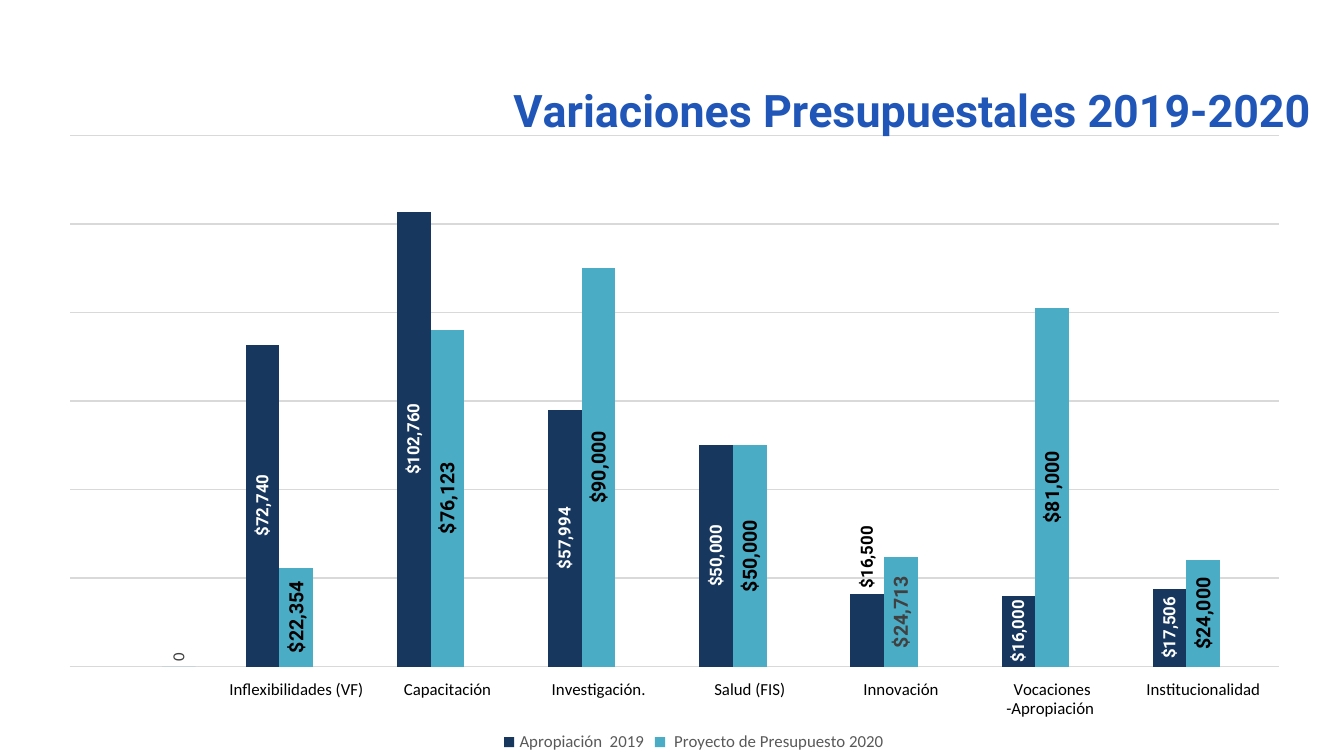
from dataclasses import dataclass

from lxml.etree import SubElement
from pptx import Presentation
from pptx.chart.data import CategoryChartData
from pptx.dml.color import RGBColor
from pptx.enum.chart import (XL_CHART_TYPE as ChartType, XL_LABEL_POSITION as LabelPos,
                             XL_LEGEND_POSITION as LegendPos, XL_TICK_LABEL_POSITION as TickLabelPos,
                             XL_TICK_MARK as TickMark)
from pptx.oxml import parse_xml
from pptx.oxml.ns import nsdecls, qn
from pptx.util import Pt

PX = 9525  # EMU in one px, 96 px to the inch


@dataclass(frozen=True)
class Theme:
    heading: str = "Roboto"
    body: str = "Calibri"
    title: str = "2056B7"
    navy: str = "17375E"
    teal: str = "4BACC6"
    grid: str = "D9D9D9"
    black: str = "000000"
    white: str = "FFFFFF"
    gray: str = "595959"
    dark: str = "404040"
    title_size: float = 24
    large_size: float = 10.5
    small_size: float = 9


THEME = Theme()
MONEY = '"$"#,##0'

BUDGET_AREAS = ["", "Inflexibilidades (VF)", "Capacitación", "Investigación.", "Salud (FIS)",
                "Innovación", "Vocaciones -Apropiación ", "Institucionalidad"]
BUDGETS = {
    "Apropiación  2019": [None, 72740, 102760, 57994, 50000, 16500, 16000, 17506],
    " Proyecto de Presupuesto 2020": [None, 22354, 76123, 90000, 50000, 24713, 81000, 24000],
    "Series 3": [0] + [None] * 7,
}


def format_font(font, size=THEME.small_size, color=THEME.black, bold=False, face=THEME.body):
    font.size, font.bold, font.name = Pt(size), bold, face
    font.color.rgb = RGBColor.from_string(color)


def write_text(frame, text, **style):
    frame.text = text
    format_font(frame.paragraphs[0].runs[0].font, **style)


def draw_line(line, color):
    line.color.rgb = RGBColor.from_string(color)
    line.width = Pt(0.75)


def set_layout(parent, target=None, **place):
    """Place a chart part by fractions of the chart box."""
    layout = parent.find(qn("c:layout"))
    if layout is None:
        layout = parse_xml(f"<c:layout {nsdecls('c')}/>")
        parent.insert(0, layout)
    manual = SubElement(layout, qn("c:manualLayout"))
    if target:
        SubElement(manual, qn("c:layoutTarget"), val=target)
    for axis in "xy":
        SubElement(manual, qn(f"c:{axis}Mode"), val="edge")
    for key, value in place.items():
        SubElement(manual, qn(f"c:{key}"), val=str(value))


def label_series(series, number_format, position, **style):
    labels = series.data_labels
    labels.show_value = True
    labels.position = position
    labels.number_format, labels.number_format_is_linked = number_format, False
    format_font(labels.font, **style)


def label_point(series, index, position, **style):
    label = series.points[index].data_label
    format_font(label.font, bold=True, face=THEME.heading, **style)
    label.position = position


def style_labels(chart):
    appropriation, project, placeholder = chart.plots[0].series
    label_series(appropriation, MONEY, LabelPos.CENTER,
                 color=THEME.white, bold=True, face=THEME.heading)
    label_series(project, MONEY, LabelPos.CENTER, size=THEME.large_size,
                 color=THEME.dark, bold=True, face=THEME.heading)
    label_series(placeholder, "General", LabelPos.OUTSIDE_END, color=THEME.dark)

    # Labels that differ from their series
    label_point(appropriation, 5, LabelPos.OUTSIDE_END)
    for index in (1, 2, 3, 4, 6, 7):
        label_point(project, index, LabelPos.CENTER, size=THEME.large_size)
    for text_style in chart.element.xpath(".//c:dLbl/c:txPr"):
        text_style.addprevious(parse_xml(
            f"<c:numFmt {nsdecls('c')} formatCode='{MONEY}' sourceLinked='0'/>"))

    # All labels read upwards
    for body in chart.element.xpath(".//c:dLbls//c:txPr/a:bodyPr"):
        body.set("rot", "-5400000")
        body.set("vert", "horz")


def style_axes(chart):
    areas = chart.category_axis
    areas.major_tick_mark = areas.minor_tick_mark = TickMark.NONE
    areas.tick_label_position = TickLabelPos.LOW
    format_font(areas.tick_labels.font)
    draw_line(areas.format.line, THEME.grid)

    amounts = chart.value_axis
    amounts.minimum_scale, amounts.maximum_scale, amounts.major_unit = 0, 120000, 20000
    amounts.has_major_gridlines = True
    draw_line(amounts.major_gridlines.format.line, THEME.grid)
    amounts.visible = False


def style_legend(chart):
    chart.has_legend = True
    legend = chart.legend
    legend.position = LegendPos.BOTTOM
    legend.include_in_layout = False
    format_font(legend.font, color=THEME.gray)
    # Only the two budgets are listed
    chart.element.xpath(".//c:legend/c:legendPos")[0].addnext(parse_xml(
        f"<c:legendEntry {nsdecls('c')}><c:idx val='2'/><c:delete val='1'/></c:legendEntry>"))


def add_budget_chart(slide, left, top, width, height):
    data = CategoryChartData()
    data.categories = BUDGET_AREAS
    for name, amounts in BUDGETS.items():
        data.add_series(name, amounts)
    box = [length * PX for length in (left, top, width, height)]
    chart = slide.shapes.add_chart(ChartType.COLUMN_CLUSTERED, *box, data).chart
    format_font(chart.font, size=10)

    # Title
    chart.has_title = True
    write_text(chart.chart_title.text_frame, "Variaciones Presupuestales 2019-2020",
               size=THEME.title_size, color=THEME.title, bold=True, face=THEME.heading)
    set_layout(chart.element.xpath(".//c:title")[0], x=0.35, y=0.04)

    # Columns
    plot = chart.plots[0]
    plot.gap_width, plot.vary_by_categories = 150, False
    for series, color in zip(plot.series, (THEME.navy, THEME.teal, THEME.teal)):
        series.format.fill.solid()
        series.format.fill.fore_color.rgb = RGBColor.from_string(color)
        series.invert_if_negative = False
    set_layout(chart.element.xpath(".//c:plotArea")[0], "inner",
               x=0.003, y=0.129, w=0.963, h=0.744)

    style_labels(chart)
    style_axes(chart)
    style_legend(chart)


def main():
    deck = Presentation()
    deck.slide_width, deck.slide_height = 960 * PX, 540 * PX
    slide = deck.slides.add_slide(deck.slide_layouts[6])
    add_budget_chart(slide, 47, 31, 897, 510)
    deck.save("out.pptx")


if __name__ == "__main__":
    main()
